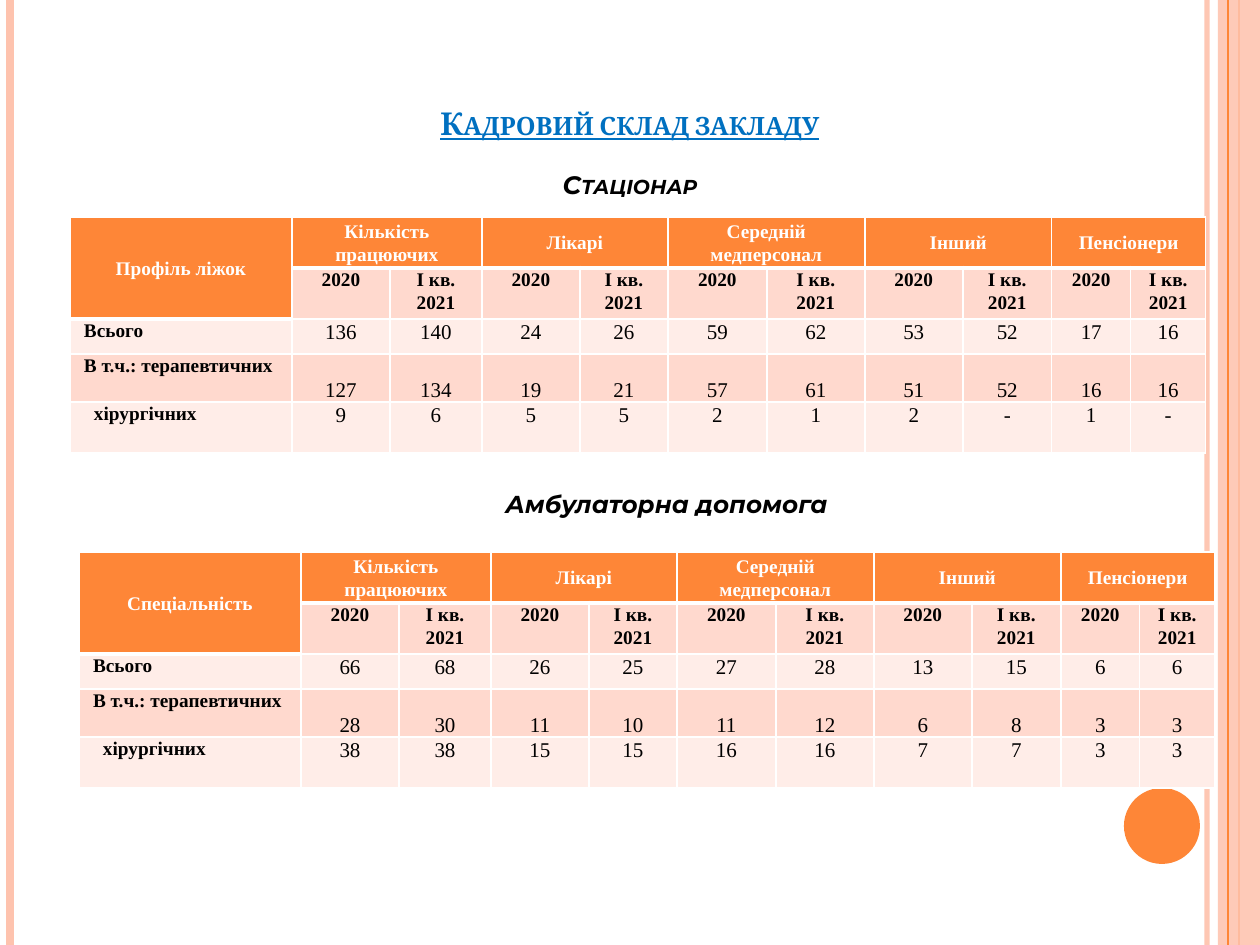
from dataclasses import dataclass

from lxml import etree
from pptx import Presentation
from pptx import util as u
from pptx.dml import color
from pptx.enum import shapes, text
from pptx.oxml import ns


@dataclass(frozen=True)
class Theme:
    accent: str = "FE8637"
    stripe: str = "FEC3AE"
    band: str = "FFD9CE"
    pale: str = "FFEDE8"
    white: str = "FFFFFF"
    ink: str = "000000"
    blue: str = "0070C0"
    heading_font: str = "Cambria"
    subheading_font: str = "Montserrat"
    table_font: str = "Times New Roman"
    heading: float = 18
    subheading: float = 14.4
    caption: float = 14
    label: float = 11
    value: float = 12


THEME = Theme()
SCALE = 914400 / 126
WIDTH, HEIGHT = 1260, 945

STRIPES_BEHIND = [
    (1207, 3, THEME.stripe, 93),
    (10, 4.5, THEME.stripe, 100),
    (1239, 1.5, THEME.accent, 100),
]
STRIPE_FRONT = (1228, 0.75, THEME.accent, 100)
SIDE_BAND = (1218, 0, 42, HEIGHT)
DOT = (1124, 788, 76, 76)

TITLE = "Кадровий склад закладу"
INPATIENT = "Стаціонар"
OUTPATIENT = "Амбулаторна допомога"

GROUPS = ["Кількість працюючих", "Лікарі", "Середній медперсонал", "Інший", "Пенсіонери"]
PERIODS = ["2020", "І кв. 2021"]
ROW_LABELS = [("Всього", 5), ("В т.ч.: терапевтичних", 5), ("хірургічних", 15)]
COLUMNS = [222, 98, 92, 98, 88, 99, 98, 98, 89, 79, 75]
ROWS = [51, 51, 35, 48, 51]
INSET = 9

TABLES = [
    ("Профіль ліжок", 70, 217, [
        [136, 140, 24, 26, 59, 62, 53, 52, 17, 16],
        [127, 134, 19, 21, 57, 61, 51, 52, 16, 16],
        [9, 6, 5, 5, 2, 1, 2, "-", 1, "-"],
    ]),
    ("Спеціальність", 79, 552, [
        [66, 68, 26, 25, 27, 28, 13, 15, 6, 6],
        [28, 30, 11, 10, 11, 12, 6, 8, 3, 3],
        [38, 38, 15, 15, 16, 16, 7, 7, 3, 3],
    ]),
]


def px(length):
    return u.Emu(round(length * SCALE))


def paint(fill, tone, opacity=100):
    fill.solid()
    fill.fore_color.rgb = color.RGBColor.from_string(tone)
    if opacity < 100:
        tint = fill._xPr.find(".//" + ns.qn("a:srgbClr"))
        etree.SubElement(tint, ns.qn("a:alpha"), val=str(opacity * 1000))


def style(para, size, name, tone, bold=True, italic=False):
    font = para.font
    font.size, font.name, font.bold, font.italic = u.Pt(size), name, bold, italic
    paint(font.fill, tone)


def add_stripe(slide, x, weight, tone, opacity):
    line = slide.shapes.add_connector(
        shapes.MSO_CONNECTOR.STRAIGHT, px(x), 0, px(x), px(HEIGHT))
    line.line.width = u.Pt(weight)
    paint(line.line.fill, tone, opacity)
    etree.SubElement(line._element.spPr, ns.qn("a:effectLst"))


def add_plain_shape(slide, kind, place, tone, opacity=100):
    shape = slide.shapes.add_shape(kind, *map(px, place))
    shape.shadow.inherit = False
    shape.line.fill.background()
    paint(shape.fill, tone, opacity)


def add_heading(slide):
    box = slide.shapes.add_textbox(px(63), px(97), px(1134), px(139))
    frame = box.text_frame
    frame.word_wrap = True
    frame.vertical_anchor = text.MSO_ANCHOR.BOTTOM
    frame.margin_bottom = px(36)
    frame.text = f"{TITLE}\n{INPATIENT}"
    title, subtitle = frame.paragraphs
    style(title, THEME.heading, THEME.heading_font, THEME.blue)
    title.font.underline = True
    style(subtitle, THEME.subheading, THEME.subheading_font, THEME.ink, italic=True)
    subtitle.space_before = u.Pt(16)
    for para in frame.paragraphs:
        para.alignment = text.PP_ALIGN.CENTER
        para.font._element.set("cap", "small")


def add_caption(slide):
    box = slide.shapes.add_textbox(px(493), px(483), px(360), px(43))
    box.text_frame.word_wrap = False
    box.text_frame.text = OUTPATIENT
    style(box.text_frame.paragraphs[0], THEME.caption, THEME.subheading_font,
          THEME.ink, italic=True)


def set_borders(cell, bottom):
    props = cell._tc.get_or_add_tcPr()
    for place, (side, weight) in enumerate(
            [("lnL", 1), ("lnR", 1), ("lnT", 1), ("lnB", bottom)]):
        edge = etree.Element(ns.qn(f"a:{side}"), w=str(u.Pt(weight)))
        fill = etree.SubElement(edge, ns.qn("a:solidFill"))
        etree.SubElement(fill, ns.qn("a:srgbClr"), val=THEME.white)
        props.insert(place, edge)


def fill_cell(cell, content, tone, ink=THEME.ink, size=THEME.label, bold=True,
              align=text.PP_ALIGN.CENTER, anchor=text.MSO_ANCHOR.TOP, indent=0):
    cell.text = str(content)
    cell.margin_left, cell.margin_right = px(INSET + indent), px(INSET)
    cell.margin_top = cell.margin_bottom = 0
    cell.vertical_anchor = anchor
    paint(cell.fill, tone)
    para = cell.text_frame.paragraphs[0]
    para.alignment, para.line_spacing = align, 1.07
    style(para, size, THEME.table_font, ink, bold)


def add_staff_table(slide, corner, left, top, values):
    frame = slide.shapes.add_table(len(ROWS), len(COLUMNS), px(left), px(top),
                                   px(sum(COLUMNS)), px(sum(ROWS)))
    table = frame.table
    table.first_row = table.horz_banding = False
    for column, width in zip(table.columns, COLUMNS):
        column.width = px(width)
    for row, height in zip(table.rows, ROWS):
        row.height = px(height)

    header = dict(tone=THEME.accent, ink=THEME.white, anchor=text.MSO_ANCHOR.MIDDLE)
    table.cell(0, 0).merge(table.cell(1, 0))
    fill_cell(table.cell(0, 0), corner, **header)
    for index, group in enumerate(GROUPS):
        first = 1 + index * len(PERIODS)
        table.cell(0, first).merge(table.cell(0, first + len(PERIODS) - 1))
        fill_cell(table.cell(0, first), group, **header)
        for offset, period in enumerate(PERIODS):
            fill_cell(table.cell(1, first + offset), period, THEME.band)

    for index, ((label, indent), numbers) in enumerate(zip(ROW_LABELS, values)):
        middle = index == 1
        tone = THEME.band if middle else THEME.pale
        anchor = text.MSO_ANCHOR.BOTTOM if middle else text.MSO_ANCHOR.TOP
        fill_cell(table.cell(index + 2, 0), label, tone,
                  align=text.PP_ALIGN.LEFT, indent=indent)
        for column, number in enumerate(numbers, 1):
            fill_cell(table.cell(index + 2, column), number, tone,
                      size=THEME.value, bold=False, anchor=anchor)

    for row in range(len(ROWS)):
        for column in range(len(COLUMNS)):
            heavy = row == 0 or (row == 1 and column == 0)
            set_borders(table.cell(row, column), 3 if heavy else 1)


def main():
    deck = Presentation()
    deck.slide_width, deck.slide_height = px(WIDTH), px(HEIGHT)
    slide = deck.slides.add_slide(deck.slide_layouts[6])
    for stripe in STRIPES_BEHIND:
        add_stripe(slide, *stripe)
    add_plain_shape(slide, shapes.MSO_SHAPE.RECTANGLE, SIDE_BAND, THEME.stripe, 87)
    add_stripe(slide, *STRIPE_FRONT)
    add_plain_shape(slide, shapes.MSO_SHAPE.OVAL, DOT, THEME.accent)
    add_heading(slide)
    for staff in TABLES:
        add_staff_table(slide, *staff)
    add_caption(slide)
    deck.save("out.pptx")


if __name__ == "__main__":
    main()
